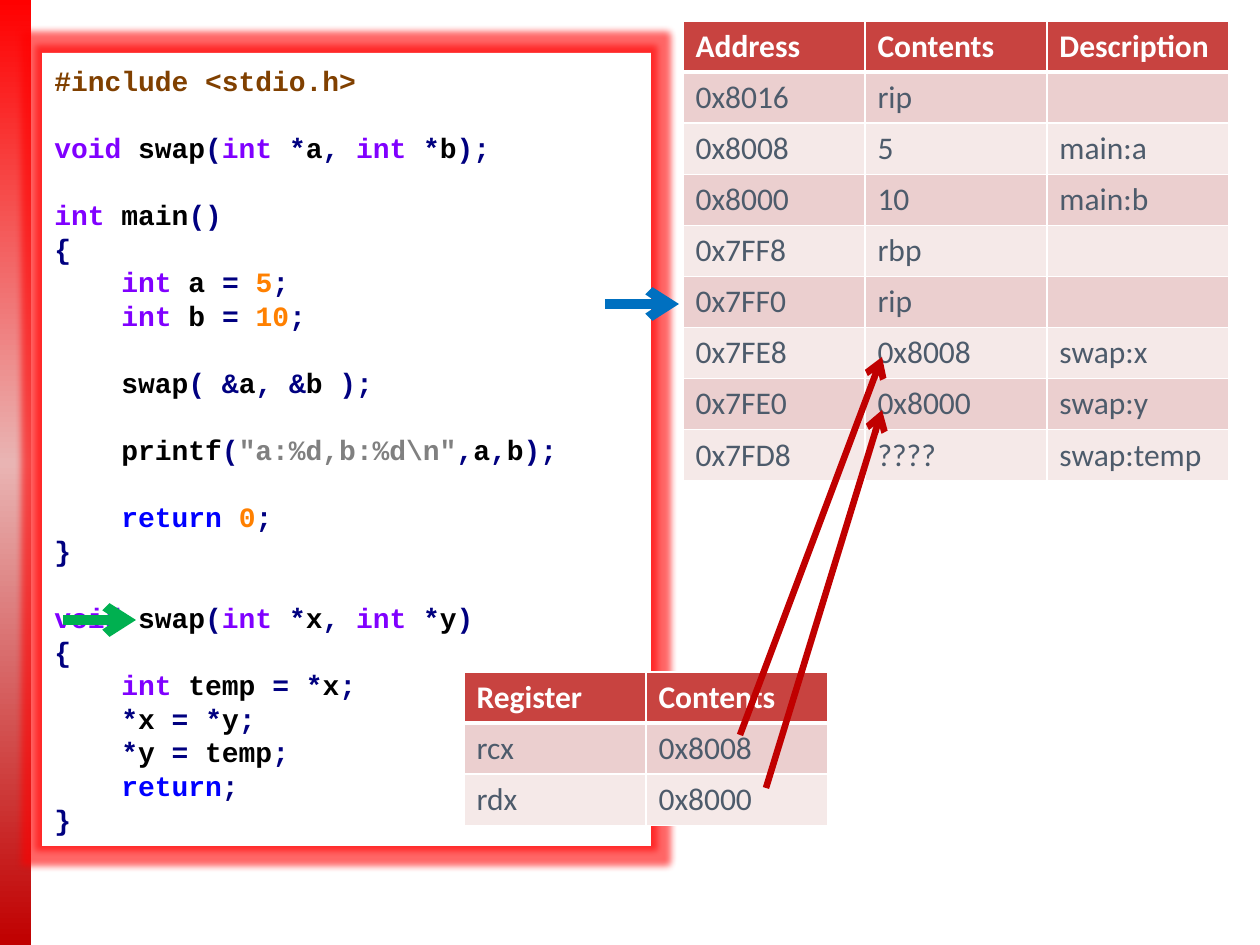
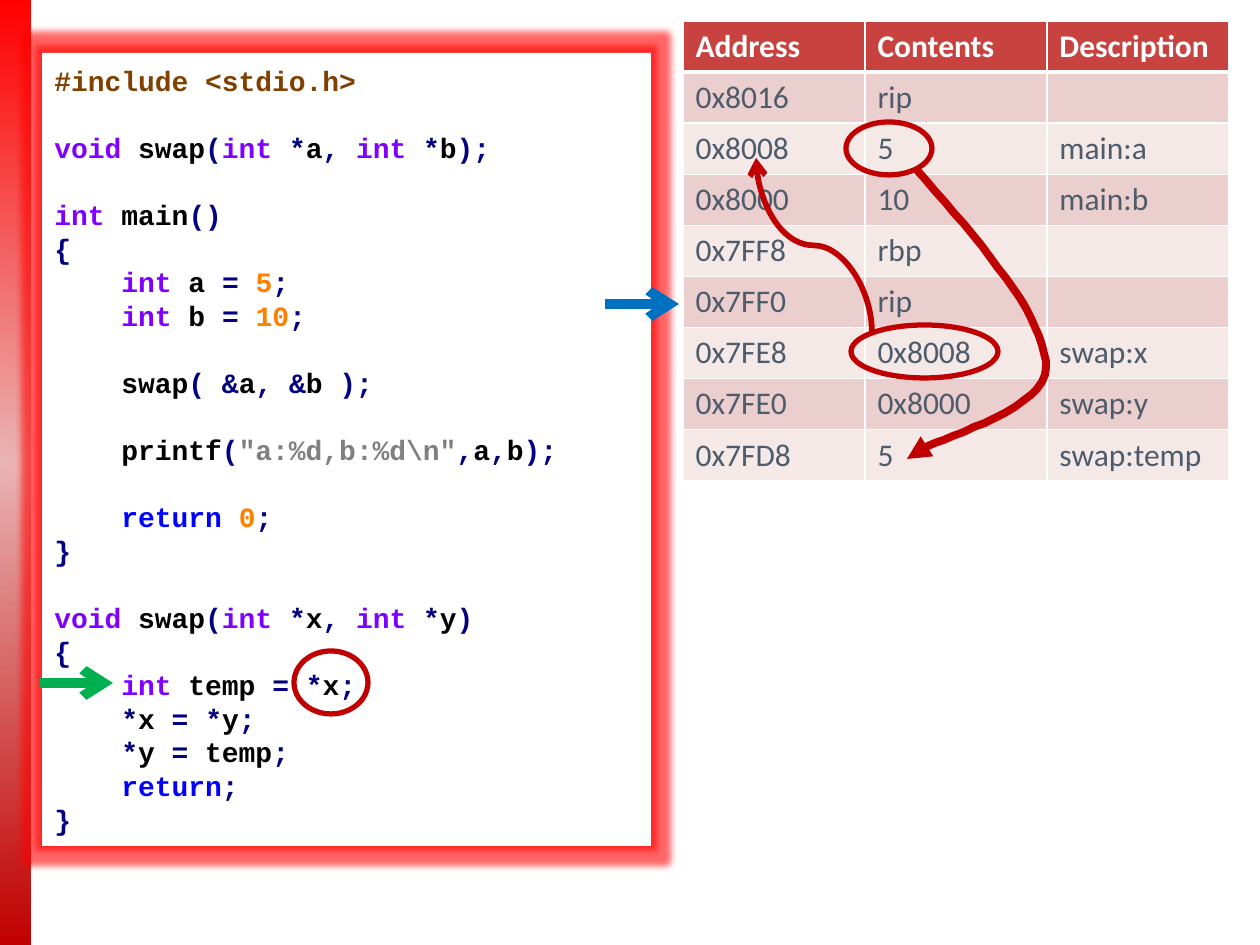
from itertools import groupby

from lxml.etree import SubElement
from pptx import Presentation
from pptx.dml.color import RGBColor
from pptx.enum.shapes import MSO_CONNECTOR, MSO_SHAPE
from pptx.enum.text import MSO_ANCHOR, PP_ALIGN
from pptx.oxml import parse_xml
from pptx.oxml.ns import nsdecls, qn
from pptx.util import Emu, Pt

EMU_PER_PX = 914400 / 126
SLIDE_W, SLIDE_H = 1260, 945

# Colours
WHITE = RGBColor(0xFF, 0xFF, 0xFF)
BLACK = RGBColor(0x00, 0x00, 0x00)
RED = RGBColor(0xFF, 0x00, 0x00)
PINK = RGBColor(0xE9, 0xB4, 0xB3)
DARK_RED = RGBColor(0xC0, 0x00, 0x00)
GREEN = RGBColor(0x00, 0xB0, 0x50)
BLUE = RGBColor(0x00, 0x70, 0xC0)
HEADER = RGBColor(0xC8, 0x43, 0x40)
BANDS = (RGBColor(0xF5, 0xE9, 0xE8), RGBColor(0xEB, 0xCF, 0xCF))
CELL_TEXT = RGBColor(0x4D, 0x5B, 0x6B)

# Syntax colours
DIRECTIVE = RGBColor(0x80, 0x40, 0x00)
TYPE = RGBColor(0x80, 0x00, 0xFF)
KEYWORD = RGBColor(0x00, 0x00, 0xFF)
NUMBER = RGBColor(0xFF, 0x80, 0x00)
STRING = RGBColor(0x80, 0x80, 0x80)
SYMBOL = RGBColor(0x00, 0x00, 0x80)
WORDS = {"int": TYPE, "void": TYPE, "return": KEYWORD}

CODE_FONT = {"name": "Courier New", "size": Pt(16), "bold": True}
CODE_PITCH = Pt(19.2)
CODE_INDENT = 67
CELL_FONT = {"name": "Calibri", "size": Pt(18)}
COL_W, ROW_H = 182, 51

CODE = r"""#include <stdio.h>

void swap(int *a, int *b);

int main()
{
    int a = 5;
    int b = 10;

    swap( &a, &b );

    printf("a:%d,b:%d\n",a,b);

    return 0;
}

void swap(int *x, int *y)
{
    int temp = *x;
    *x = *y;
    *y = temp;
    return;
}"""

REGISTERS = [("Register", "Contents"), ("rcx", "0x8008"), ("rdx", "0x8000")]


def memory(temp):
    """Stack rows, with the given value held in swap's temp."""
    return [
        ("Address", "Contents", "Description"),
        ("0x8016", "rip", ""),
        ("0x8008", "5", "main:a"),
        ("0x8000", "10", "main:b"),
        ("0x7FF8", "rbp", ""),
        ("0x7FF0", "rip", ""),
        ("0x7FE8", "0x8008", "swap:x"),
        ("0x7FE0", "0x8000", "swap:y"),
        ("0x7FD8", temp, "swap:temp"),
    ]


def px(*lengths):
    return [Emu(round(n * EMU_PER_PX)) for n in lengths]


def set_format(obj, values):
    for name, value in values.items():
        setattr(obj, name, value)


def add_run(p, text, font, color):
    r = p.add_run()
    r.text = text
    set_format(r.font, font)
    r.font.color.rgb = color


def add_plain_shape(slide, kind, *box):
    sp = slide.shapes.add_shape(kind, *px(*box))
    sp.shadow.inherit = False
    sp.fill.background()
    sp.line.fill.background()
    return sp


def set_line(sp, color, width, head=None):
    sp.line.color.rgb = color
    sp.line.width = Pt(width)
    if head:
        ln = sp.element.spPr.find(qn("a:ln"))
        SubElement(ln, qn("a:tailEnd"), type=head)


# Side band, placed on the layout
def add_band(layout, slide):
    sp = add_plain_shape(slide, MSO_SHAPE.RECTANGLE, 0, 0, 31, SLIDE_H)
    stops = "".join(
        f'<a:gs pos="{pos * 1000}"><a:srgbClr val="{color}"/></a:gs>'
        for pos, color in ((0, RED), (49, PINK), (100, DARK_RED)))
    grad = parse_xml(f'<a:gradFill {nsdecls("a")}><a:gsLst>{stops}</a:gsLst>'
                     '<a:lin ang="5400000" scaled="0"/></a:gradFill>')
    spPr = sp.element.spPr
    spPr.replace(spPr.find(qn("a:noFill")), grad)
    layout.shapes.element.append(sp.element)


# Code listing
def tokens(line):
    """Yield (text, colour) pairs for one line of C."""
    if line.startswith("#"):
        yield line, DIRECTIVE
        return
    for i, part in enumerate(line.split('"')):
        if i % 2:
            yield f'"{part}"', STRING
            continue
        for _, chars in groupby(part, lambda c: (c.isalnum(), c.isspace())):
            text = "".join(chars)
            if text.isdigit():
                yield text, NUMBER
            elif text.isalnum() or text.isspace():
                yield text, WORDS.get(text, BLACK)
            else:
                yield text, SYMBOL


def add_code(slide):
    sp = add_plain_shape(slide, MSO_SHAPE.RECTANGLE, 42, 53, 609, 793)
    sp.fill.solid()
    sp.fill.fore_color.rgb = WHITE
    effects = sp.element.spPr.find(qn("a:effectLst"))
    effects.append(parse_xml(
        f'<a:glow {nsdecls("a")} rad="101600"><a:srgbClr val="{RED}">'
        '<a:alpha val="60000"/></a:srgbClr></a:glow>'))
    tf = sp.text_frame
    set_format(tf, {"word_wrap": True, "vertical_anchor": MSO_ANCHOR.MIDDLE})
    p, gap = tf.paragraphs[0], Pt(0)
    for line in CODE.splitlines():
        if not line:
            gap = CODE_PITCH
            continue
        if p.runs:
            p = tf.add_paragraph()
        set_format(p, {"alignment": PP_ALIGN.LEFT, "line_spacing": CODE_PITCH,
                       "space_before": gap})
        gap = Pt(0)
        if line.startswith(" "):
            pPr = p._p.get_or_add_pPr()
            pPr.set("marL", str(px(CODE_INDENT)[0]))
            pPr.set("indent", "0")
        for text, color in tokens(line.strip()):
            add_run(p, text, CODE_FONT, color)


# Tables
def set_borders(cell, row):
    widths = {"L": 1, "R": 1, "T": 3 if row == 1 else 1,
              "B": 3 if row == 0 else 1}
    tcPr = cell._tc.get_or_add_tcPr()
    for i, (side, width) in enumerate(widths.items()):
        tcPr.insert(i, parse_xml(
            f'<a:ln{side} {nsdecls("a")} w="{Pt(width)}"><a:solidFill>'
            f'<a:srgbClr val="{WHITE}"/></a:solidFill></a:ln{side}>'))


def add_grid(slide, left, top, rows):
    n_cols = len(rows[0])
    box = px(left, top, COL_W * n_cols, ROW_H * len(rows))
    table = slide.shapes.add_table(len(rows), n_cols, *box).table
    for col in table.columns:
        col.width = px(COL_W)[0]
    for i, row in enumerate(rows):
        table.rows[i].height = px(ROW_H)[0]
        for j, text in enumerate(row):
            cell = table.cell(i, j)
            cell.fill.solid()
            cell.fill.fore_color.rgb = BANDS[i % 2] if i else HEADER
            set_borders(cell, i)
            if text:
                add_run(cell.text_frame.paragraphs[0], text,
                        {**CELL_FONT, "bold": i == 0},
                        CELL_TEXT if i else WHITE)


# Arrows and marks
def add_arrow(slide, x1, y1, x2, y2, color, width,
              kind=MSO_CONNECTOR.STRAIGHT):
    line = slide.shapes.add_connector(kind, *px(x1, y1, x2, y2))
    set_line(line, color, width, "arrow")
    SubElement(line.element.spPr, qn("a:effectLst"))
    return line


def add_upright_curve(slide, x1, y1, x2, y2):
    """S-curve up and to the left: a level one turned by 270 degrees."""
    mid_x, mid_y = (x1 + x2) / 2, (y1 + y2) / 2
    dx, dy = (y1 - y2) / 2, (x1 - x2) / 2
    line = add_arrow(slide, mid_x - dx, mid_y + dy, mid_x + dx, mid_y - dy,
                     DARK_RED, 3.25, MSO_CONNECTOR.CURVE)
    line.element.spPr.find(qn("a:xfrm")).set("rot", "16200000")


def add_ring(slide, *box):
    set_line(add_plain_shape(slide, MSO_SHAPE.OVAL, *box), DARK_RED, 3)


def bezier(a, b, c, d, steps=20):
    for i in range(1, steps + 1):
        t = i / steps
        u = 1 - t
        yield tuple(u**3 * p + 3 * u * u * t * q + 3 * u * t * t * r + t**3 * s
                    for p, q, r, s in zip(a, b, c, d))


def add_sweep(slide, start, *curves):
    builder = slide.shapes.build_freeform(*start, scale=EMU_PER_PX)
    for curve in curves:
        builder.add_line_segments(list(bezier(start, *curve)), close=False)
        start = curve[-1]
    sp = builder.convert_to_shape()
    sp.shadow.inherit = False
    sp.fill.background()
    set_line(sp, DARK_RED, 4.5, "triangle")


def add_step(slide, temp, code_x, code_y):
    """Code, memory, and the arrows at the current line and stack slot."""
    add_code(slide)
    add_grid(slide, 683, 21, memory(temp))
    add_arrow(slide, code_x, code_y, code_x + 73, code_y, GREEN, 5.5)
    add_arrow(slide, 605, 304, 679, 304, BLUE, 5.5)


def main():
    prs = Presentation()
    prs.slide_width, prs.slide_height = px(SLIDE_W, SLIDE_H)
    layout = prs.slide_layouts[6]

    # Entering swap: registers hold the arguments
    slide = prs.slides.add_slide(layout)
    add_band(layout, slide)
    add_step(slide, "????", 63, 620)
    add_grid(slide, 464, 672, REGISTERS)
    add_arrow(slide, 740, 735, 882, 357, DARK_RED, 3.75)
    add_arrow(slide, 766, 788, 882, 410, DARK_RED, 3.75)

    # Reading *x into temp
    slide = prs.slides.add_slide(layout)
    add_step(slide, "5", 40, 683)
    for box in ((294, 651, 74, 63), (851, 325, 147, 53), (846, 122, 86, 53)):
        add_ring(slide, *box)
    add_upright_curve(slide, 872, 333, 756, 158)
    add_sweep(slide, (915, 168),
              ((982, 243), (1047, 320), (1046, 368)),
              ((1045, 417), (902, 447), (907, 459)))

    prs.save("out.pptx")


if __name__ == "__main__":
    main()
